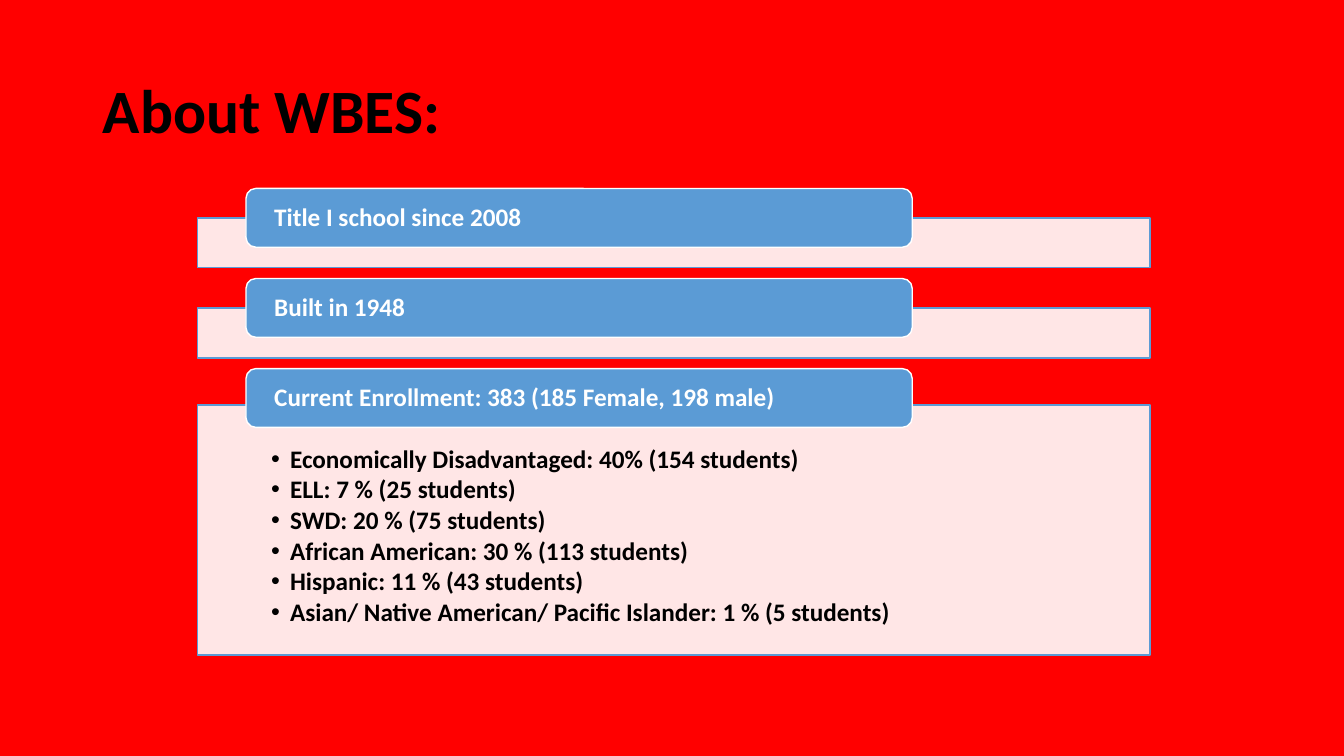
from lxml import etree
from pptx import Presentation
from pptx.dml.color import RGBColor
from pptx.enum.shapes import MSO_SHAPE
from pptx.enum.text import MSO_ANCHOR, MSO_AUTO_SIZE, PP_ALIGN
from pptx.oxml.ns import qn
from pptx.util import Cm, Pt

RECT, ROUND = MSO_SHAPE.RECTANGLE, MSO_SHAPE.ROUNDED_RECTANGLE
MIDDLE, TOP = MSO_ANCHOR.MIDDLE, MSO_ANCHOR.TOP
LEFT, FIXED = PP_ALIGN.LEFT, MSO_AUTO_SIZE.NONE
HUES = {"back": "FF0000", "tab": "5B9BD5", "white": "FFFFFF", "ink": "000000"}


def paint(shape, fill, line, alpha=None):
    """Set fill and outline, with the fill's opacity in percent."""
    shape.fill.solid()
    shape.fill.fore_color.rgb = RGBColor.from_string(HUES[fill])
    shape.line.color.rgb = RGBColor.from_string(HUES[line])
    shape.line.width = Pt(1)
    if alpha:
        tone = shape._element.spPr.find(qn("a:solidFill"))[0]
        etree.SubElement(tone, qn("a:alpha"), val=str(alpha * 1000))


def write(shape, lines, size, hue, anchor, pads, after):
    """Fill a shape with bold, left-aligned lines."""
    frame = shape.text_frame
    frame.text = "\n".join(lines)
    left, top, right, bottom = map(Cm, pads)
    look = {"word_wrap": True, "auto_size": FIXED, "vertical_anchor": anchor,
            "margin_left": left, "margin_top": top,
            "margin_right": right, "margin_bottom": bottom}
    for name, value in look.items():
        setattr(frame, name, value)
    for para in frame.paragraphs:
        form = {"alignment": LEFT, "line_spacing": 0.9,
                "space_before": Pt(0), "space_after": Pt(after)}
        for name, value in form.items():
            setattr(para, name, value)
        font = para.runs[0].font
        for name, value in {"name": "Calibri", "size": Pt(size), "bold": True}.items():
            setattr(font, name, value)
        font.color.rgb = RGBColor.from_string(HUES[hue])


deck = Presentation()
deck.slide_width, deck.slide_height = Cm(33.87), Cm(19.05)
slide = deck.slides.add_slide(deck.slide_layouts[1])
slide.background.fill.solid()
slide.background.fill.fore_color.rgb = RGBColor.from_string(HUES["back"])

# Title
title = slide.shapes.title
title.left, title.top, title.width, title.height = map(Cm, (2.34, 1.02, 29.21, 3.68))
write(title, ["About WBES:"], 44, "ink", MIDDLE, (0.25, 0.13, 0.25, 0.13), 0)

# Enrollment list on its panel
groups = [
    "Economically Disadvantaged: 40% (154 students)",
    "ELL: 7 % (25 students)",
    "SWD: 20 % (75 students)",
    "African American: 30 % (113 students)",
    "Hispanic: 11 % (43 students)",
    "Asian/ Native American/ Pacific Islander: 1 % (5 students)",
]
body = slide.placeholders[1]
body.left, body.top, body.width, body.height = map(Cm, (4.98, 10.21, 24, 6.3))
paint(body, "white", "tab", 90)
write(body, groups, 18, "ink", TOP, (1.85, 1.04, 1.85, 0.36), 2.4)
for para in body.text_frame.paragraphs:
    props = para._p.get_or_add_pPr()
    props.set("marL", str(Cm(0.48)))
    props.set("indent", str(Cm(-0.48)))

# Header tabs, the first two over thin panels
heads = ["Title I school since 2008", "Built in 1948",
         "Current Enrollment: 383 (185 Female, 198 male)"]
for row, head in enumerate(heads):
    top = 4.75 + row * 2.27
    if row < 2:
        panel = slide.shapes.add_shape(RECT, Cm(4.98), Cm(top + 0.74), Cm(24), Cm(1.26))
        panel.shadow.inherit = False
        paint(panel, "white", "tab", 90)
    tab = slide.shapes.add_shape(ROUND, Cm(6.2), Cm(top), Cm(16.79), Cm(1.48))
    tab.shadow.inherit = False
    paint(tab, "tab", "white")
    write(tab, [head], 18, "white", MIDDLE, (0.64, 0, 0.64, 0), 0)

deck.save("out.pptx")
